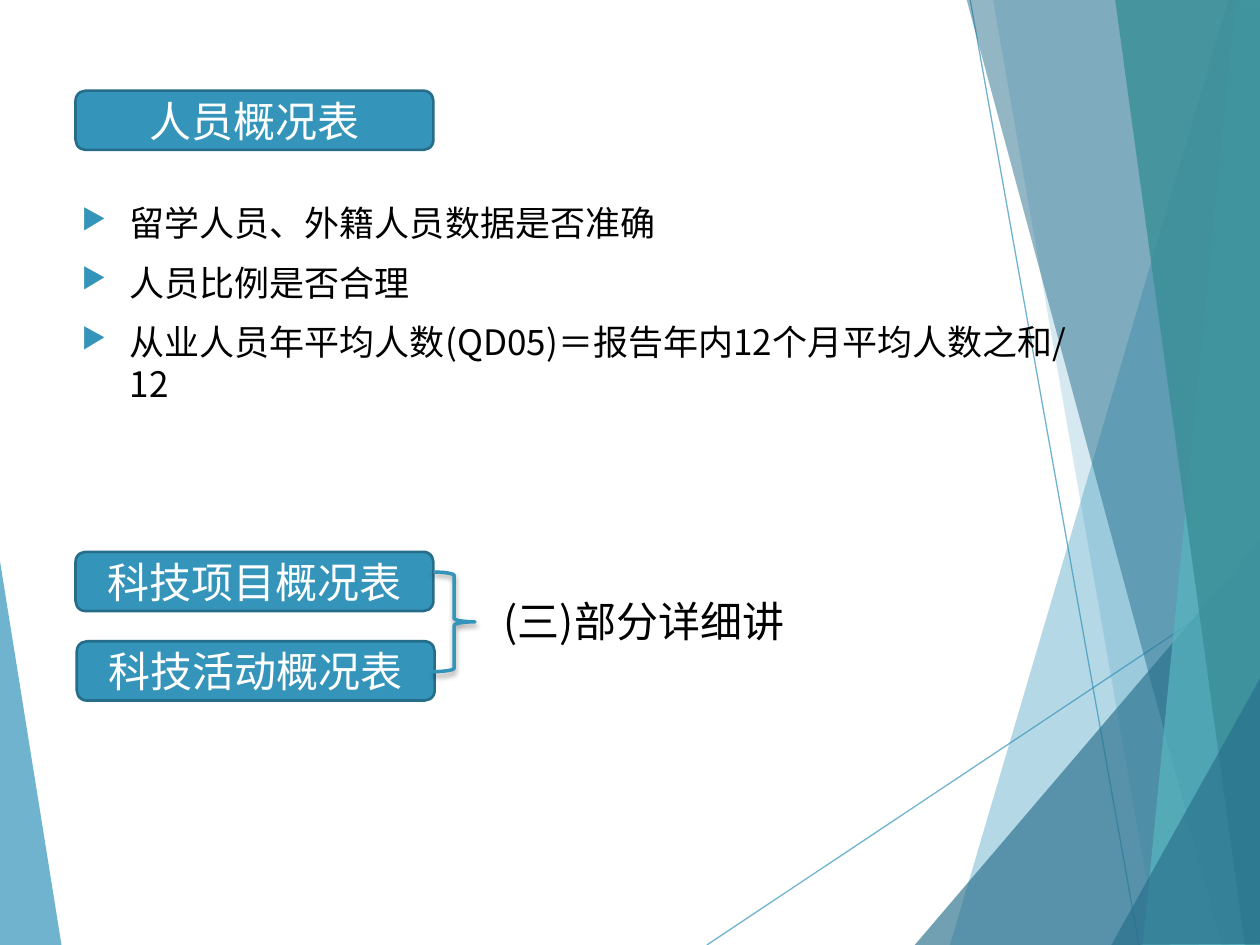
"""Build the personnel overview slide with its faceted backdrop."""
from lxml.etree import SubElement
from pptx import Presentation
from pptx.dml.color import RGBColor
from pptx.enum.shapes import MSO_CONNECTOR as Connector, MSO_SHAPE as Shape
from pptx.enum.text import MSO_ANCHOR as Anchor, PP_ALIGN as Align
from pptx.oxml.ns import qn
from pptx.util import Inches, Pt

FONT = "Noto Sans CJK SC"
COLORS = {
    "blue": "3494BA", "navy": "276F8B", "aqua": "58B6C0", "teal": "3A8F98",
    "border": "266D8A", "black": "000000", "white": "FFFFFF",
}
LEFT_FACET = ("blue", 70, [(-0.01, 4.39), (0.49, 7.51), (-0.01, 7.5)])
RIGHT_FACETS = [
    ("blue", 36, [(9.75, 0), (7.54, 7.5), (10.02, 7.51), (10.01, 0.01)]),
    ("blue", 20, [(7.88, -0.01), (9.19, 7.5), (10.01, 7.5), (10.01, -0.01)]),
    ("navy", 66, [(7.26, 7.5), (10, 4.29), (10.01, 7.5)]),
    ("navy", 50, [(7.67, -0.01), (9.7, 7.5), (10.01, 7.49), (10.01, -0.01)]),
    ("aqua", 70, [(9.81, -0.01), (9.07, 7.5), (10.01, 7.5), (10, -0.01)]),
    ("teal", 82, [(8.85, -0.01), (9.88, 7.5), (10.02, 7.5), (10, -0.01)]),
    ("navy", 66, [(8.82, 7.5), (10.02, 5.35), (10.02, 7.49)]),
]
RAYS = [(5.61, 7.5, 10.01, 4.57), (7.7, 0, 9.04, 7.5)]
BULLETS = [
    "留学人员、外籍人员数据是否准确",
    "人员比例是否合理",
    "从业人员年平均人数(QD05)＝报告年内12个月平均人数之和/12",
]
BUTTONS = [("人员概况表", 0.6, 0.72), ("科技项目概况表", 0.6, 4.38), ("科技活动概况表", 0.61, 5.09)]
NOTE = "(三)部分详细讲"


def rgb(name):
    return RGBColor.from_string(COLORS[name])


def set_alpha(shape, percent):
    for color in shape._element.spPr.findall(".//" + qn("a:srgbClr")):
        SubElement(color, qn("a:alpha"), val=str(percent * 1000))


def add_facet(page, color, percent, points):
    corners = [(Inches(x), Inches(y)) for x, y in points]
    builder = page.shapes.build_freeform(*corners[0])
    builder.add_line_segments(corners[1:], close=True)
    facet = builder.convert_to_shape()
    facet.shadow.inherit = False
    facet.fill.solid()
    facet.fill.fore_color.rgb = rgb(color)
    facet.line.fill.background()
    set_alpha(facet, percent)


def add_ray(page, ends):
    ray = page.shapes.add_connector(Connector.STRAIGHT, *map(Inches, ends))
    ray.line.width = Pt(0.75)
    ray.line.color.rgb = rgb("blue")
    set_alpha(ray, 70)
    SubElement(ray._element.spPr, qn("a:effectLst"))


def write(para, text, size, color):
    para.text = text
    for span in para.runs:
        span.font.size = Pt(size)
        span.font.name = FONT
        span.font.color.rgb = rgb(color)
        SubElement(span._r.get_or_add_rPr(), qn("a:ea"), typeface=FONT)


def add_text_box(page, *place):
    box = page.shapes.add_textbox(*map(Inches, place))
    box.text_frame.word_wrap = True
    return box.text_frame


def add_bullets(page):
    frame = add_text_box(page, 0.55, 1.55, 8.31, 1.97)
    for index, text in enumerate(BULLETS):
        para = frame.paragraphs[0] if index == 0 else frame.add_paragraph()
        write(para, text, 20, "black")
        para.space_before = Pt(10)
        props = para._p.get_or_add_pPr()
        props.set("marL", str(Inches(0.38)))
        props.set("indent", str(-Inches(0.38)))
        SubElement(SubElement(props, qn("a:buClr")), qn("a:srgbClr"), val=COLORS["blue"])
        SubElement(props, qn("a:buSzPct"), val="80000")
        SubElement(props, qn("a:buChar"), char="▶")


def add_button(page, text, left, top):
    button = page.shapes.add_shape(
        Shape.ROUNDED_RECTANGLE, Inches(left), Inches(top), Inches(2.84), Inches(0.47))
    button.shadow.inherit = False
    button.fill.solid()
    button.fill.fore_color.rgb = rgb("blue")
    button.line.color.rgb = rgb("border")
    button.line.width = Pt(1.5)
    button.text_frame.vertical_anchor = Anchor.MIDDLE
    para = button.text_frame.paragraphs[0]
    para.alignment = Align.CENTER
    write(para, text, 24, "white")


def add_brace(page):
    brace = page.shapes.add_shape(
        Shape.RIGHT_BRACE, Inches(3.44), Inches(4.54), Inches(0.33), Inches(0.79))
    brace.fill.background()
    brace.line.color.rgb = rgb("blue")
    brace.line.width = Pt(2)
    effects = SubElement(brace._element.spPr, qn("a:effectLst"))
    shadow = SubElement(
        effects, qn("a:outerShdw"), blurRad=str(Pt(3)), dist=str(Pt(2)),
        dir=str(90 * 60000), rotWithShape="0")
    color = SubElement(shadow, qn("a:srgbClr"), val=COLORS["black"])
    SubElement(color, qn("a:alpha"), val="35000")


def main():
    deck = Presentation()
    deck.slide_width, deck.slide_height = Inches(10), Inches(7.5)
    page = deck.slides.add_slide(deck.slide_layouts[6])
    add_facet(page, *LEFT_FACET)
    for ends in RAYS:
        add_ray(page, ends)
    for facet in RIGHT_FACETS:
        add_facet(page, *facet)
    add_bullets(page)
    for button in BUTTONS:
        add_button(page, *button)
    add_brace(page)
    note = add_text_box(page, 3.9, 4.68, 3.07, 0.51)
    write(note.paragraphs[0], NOTE, 24, "black")
    deck.save("out.pptx")


if __name__ == "__main__":
    main()
